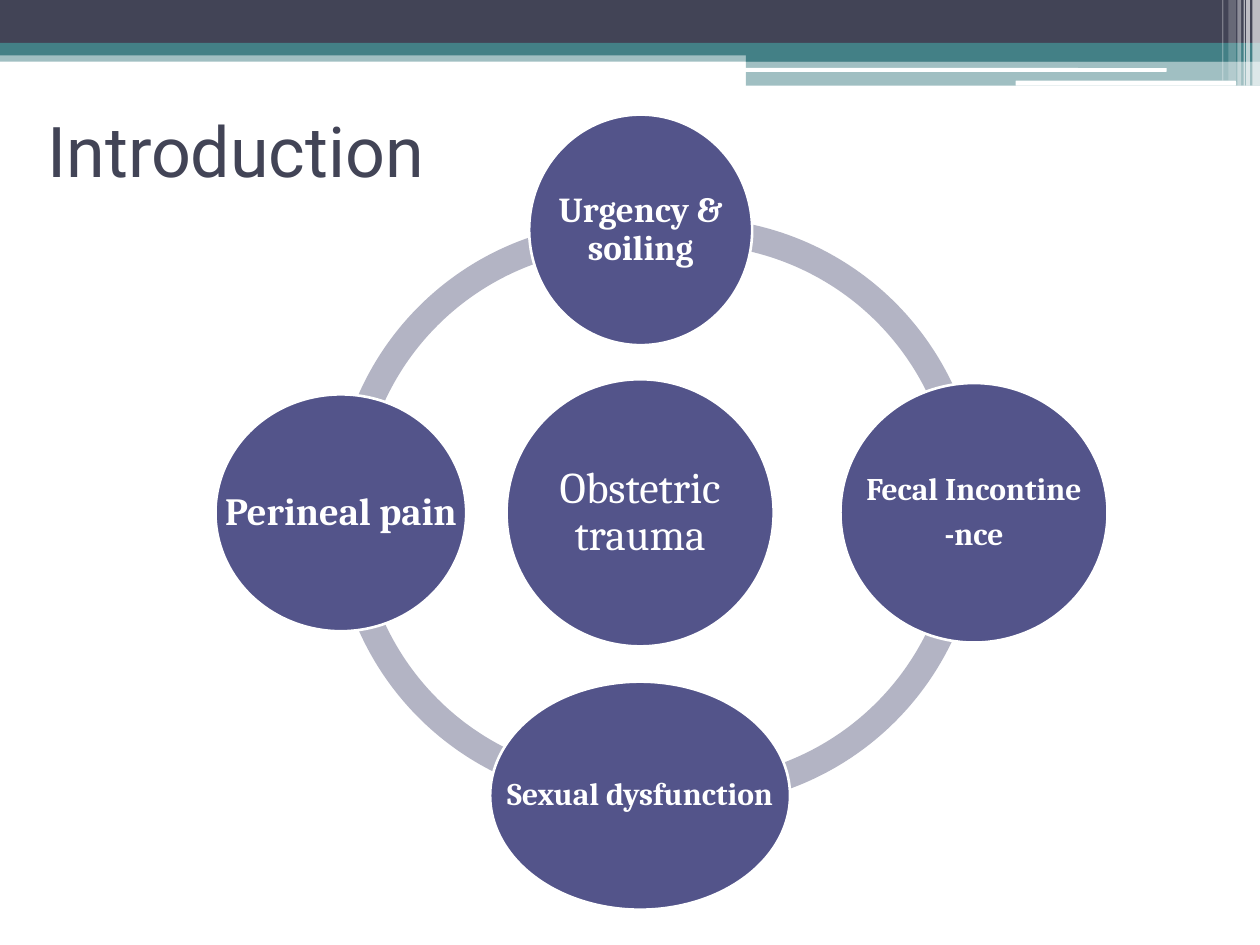
"""Build the Introduction slide: a ring of symptoms around obstetric trauma."""
from lxml import etree
from pptx import Presentation
from pptx.dml.color import RGBColor
from pptx.enum import shapes, text
from pptx.oxml.ns import qn
from pptx.util import Inches, Pt

NAVY, TEAL, WHITE, ARC, CIRCLE = "424456", "438086", "FFFFFF", "B3B4C4", "53548A"
Shape = shapes.MSO_SHAPE

presentation = Presentation()
presentation.slide_width, presentation.slide_height = Inches(10), Inches(7.5)
slide = presentation.slides.add_slide(presentation.slide_layouts[6])


def add_filled(kind, box, color, opacity=100):
    shape = slide.shapes.add_shape(kind, *map(Inches, box))
    shape.shadow.inherit = False
    shape.fill.solid()
    shape.fill.fore_color.rgb = RGBColor.from_string(color)
    shape.line.fill.background()
    if opacity < 100:
        color_element = shape.fill._xPr.find(qn("a:solidFill"))[0]
        etree.SubElement(color_element, qn("a:alpha"), val=str(opacity * 1000))
    return shape


def add_text(box, lines, size, font, color, bold=False):
    frame = slide.shapes.add_textbox(*map(Inches, box)).text_frame
    frame.word_wrap = True
    frame.vertical_anchor = text.MSO_ANCHOR.MIDDLE
    frame.text = lines
    for paragraph in frame.paragraphs:
        paragraph.font.size, paragraph.font.name = Pt(size), font
        paragraph.font.bold = bold
        paragraph.font.color.rgb = RGBColor.from_string(color)
    return frame


bands = [
    (Shape.RECTANGLE, (0, 0.4, 10, 0.09), TEAL, 50),
    (Shape.RECTANGLE, (0, 0, 10, 0.34), NAVY, 100),
    (Shape.RECTANGLE, (0, 0.34, 10, 0.1), TEAL, 100),
    (Shape.RECTANGLE, (5.92, 0.39, 4.08, 0.1), TEAL, 100),
    (Shape.RECTANGLE, (5.92, 0.48, 4.08, 0.2), TEAL, 50),
    (Shape.ROUNDED_RECTANGLE, (5.91, 0.54, 3.35, 0.03), WHITE, 100),
    (Shape.ROUNDED_RECTANGLE, (8.06, 0.64, 1.75, 0.04), WHITE, 100),
]
for kind, box, color, opacity in bands:
    add_filled(kind, box, color, opacity)

stripes = [
    (9.94, 0.06, 0.68, 65),
    (9.89, 0.03, 0.68, 65),
    (9.87, 0.01, 0.68, 60),
    (9.82, 0.03, 0.68, 40),
    (9.75, 0.06, 0.64, 20),
    (9.7, 0.01, 0.64, 30),
]
for left, width, height, opacity in stripes:
    add_filled(Shape.RECTANGLE, (left, 0, width, height), WHITE, opacity)

add_text((0.28, 0.6, 9, 1.17), "Introduction", 40, "Roboto", NAVY)

arcs = [
    (2.65, 1.76, 179.9, 273.45),
    (2.65, 1.77, 86.55, 180.1),
    (3.18, 1.8, 359.1, 100.18),
    (3.18, 1.73, 259.82, 0.9),
]
for left, top, start, end in arcs:
    arc = add_filled(Shape.BLOCK_ARC, (left, top, 4.6, 4.6), ARC)
    # adjustments count 100000ths, angles 60000ths of a degree
    for index, value in enumerate((start * 0.6, end * 0.6, 0.046)):
        arc.adjustments[index] = value

circles = [
    ((4.02, 3.01, 2.12, 2.12), "Obstetric trauma", 25, False),
    ((4.2, 0.91, 1.77, 1.83), "Urgency & soiling", 20, True),
    ((6.67, 3.04, 2.12, 2.06), "Fecal Incontine\n-nce", 18, True),
    ((3.89, 5.41, 2.38, 1.81), "Sexual dysfunction", 18, True),
    ((1.71, 3.13, 1.99, 1.88), "Perineal pain", 22, True),
]
for box, label, size, bold in circles:
    circle = add_filled(Shape.OVAL, box, CIRCLE)
    circle.line.color.rgb = RGBColor.from_string(WHITE)
    circle.line.width = Pt(1.5)
    frame = add_text(box, label, size, "Cambria", WHITE, bold)
    frame.margin_left = frame.margin_right = Inches(0.03)
    frame.margin_top = frame.margin_bottom = Inches(0.03)
    for paragraph in frame.paragraphs:
        paragraph.alignment = text.PP_ALIGN.CENTER
        paragraph.line_spacing = 0.9
        paragraph.space_after = Pt(round(size * 0.35, 1))

presentation.save("out.pptx")
